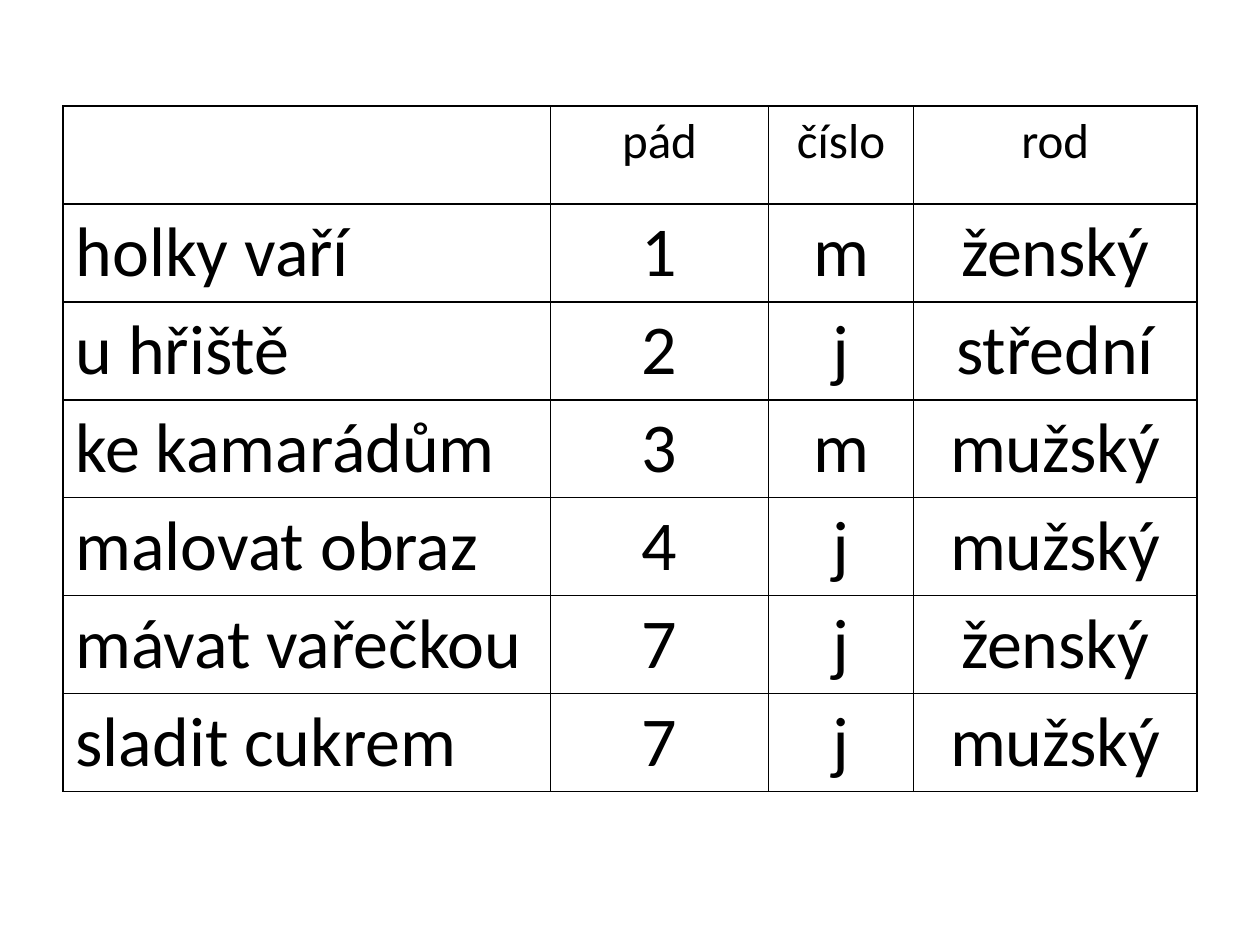
from lxml.etree import SubElement
from pptx import Presentation
from pptx.dml.color import RGBColor
from pptx.enum.text import PP_ALIGN
from pptx.oxml.ns import qn
from pptx.util import Pt

COLUMN_WIDTHS = [278.6, 124.6, 82.8, 162]
ROW_HEIGHT = 56
ROWS = [
    ("", "pád", "číslo", "rod"),
    ("holky vaří", "1", "m", "ženský"),
    ("u hřiště", "2", "j", "střední"),
    ("ke kamarádům", "3", "m", "mužský"),
    ("malovat obraz", "4", "j", "mužský"),
    ("mávat vařečkou", "7", "j", "ženský"),
    ("sladit cukrem", "7", "j", "mužský"),
]


def color(value):
    return RGBColor.from_string(value)


def write_text(cell, text, size=40, font="Calibri", fill="000000", align=PP_ALIGN.LEFT):
    paragraph = cell.text_frame.paragraphs[0]
    paragraph.alignment = align
    run = paragraph.add_run()
    run.text = text
    run.font.size = Pt(size)
    run.font.name = font
    run.font.color.rgb = color(fill)


def add_borders(cell, width=1, fill="000000"):
    properties = cell._tc.get_or_add_tcPr()
    for side in ("a:lnL", "a:lnR", "a:lnT", "a:lnB"):
        line = SubElement(properties, qn(side), w=str(Pt(width)))
        solid = SubElement(line, qn("a:solidFill"))
        SubElement(solid, qn("a:srgbClr"), val=fill)


def add_grammar_table(slide, left, top):
    shape = slide.shapes.add_table(
        len(ROWS), len(COLUMN_WIDTHS), Pt(left), Pt(top),
        Pt(sum(COLUMN_WIDTHS)), Pt(ROW_HEIGHT * len(ROWS)))
    table = shape.table
    table.first_row = False
    table.horz_banding = False
    for column, width in zip(table.columns, COLUMN_WIDTHS):
        column.width = Pt(width)
    for row_index, row in enumerate(ROWS):
        table.rows[row_index].height = Pt(ROW_HEIGHT)
        for column_index, text in enumerate(row):
            cell = table.cell(row_index, column_index)
            add_borders(cell)
            cell.fill.background()
            if text:
                write_text(cell, text, size=40 if row_index else 28,
                           align=PP_ALIGN.CENTER if column_index else PP_ALIGN.LEFT)


def main():
    presentation = Presentation()
    presentation.slide_width = Pt(720)
    presentation.slide_height = Pt(540)
    slide = presentation.slides.add_slide(presentation.slide_layouts[6])
    add_grammar_table(slide, left=36, top=60.5)
    presentation.save("out.pptx")


if __name__ == "__main__":
    main()
